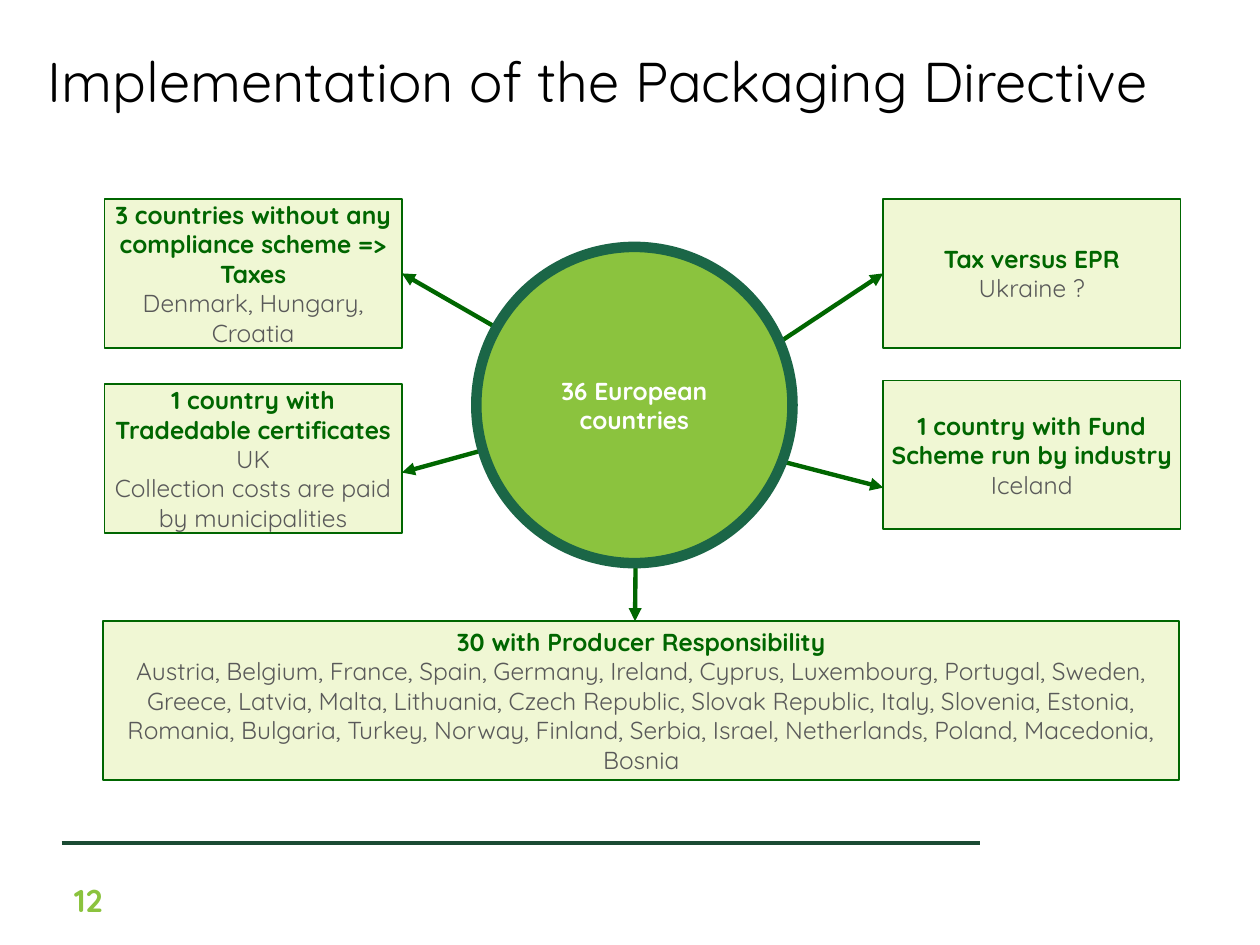
from dataclasses import dataclass

from lxml import etree
from pptx import Presentation
from pptx.dml.color import RGBColor
from pptx.enum.shapes import MSO_CONNECTOR, MSO_SHAPE
from pptx.enum.text import MSO_ANCHOR, PP_ALIGN
from pptx.oxml.ns import qn
from pptx.util import Inches, Pt

STRAIGHT = MSO_CONNECTOR.STRAIGHT
RECTANGLE, OVAL = MSO_SHAPE.RECTANGLE, MSO_SHAPE.OVAL
TOP, MIDDLE = MSO_ANCHOR.TOP, MSO_ANCHOR.MIDDLE
LEFT, CENTER = PP_ALIGN.LEFT, PP_ALIGN.CENTER


@dataclass(frozen=True)
class Theme:
    font: str = "Quicksand"
    title_size: float = 32
    number_size: float = 18
    body_size: float = 14
    black: str = "000000"
    white: str = "FFFFFF"
    grey: str = "595959"
    green: str = "006600"
    pale: str = "F0F7D4"
    lime: str = "8BC33E"
    ring: str = "1B6647"
    rule: str = "1A4B33"


@dataclass(frozen=True)
class Box:
    left: float
    top: float
    width: float
    height: float


@dataclass(frozen=True)
class Card:
    box: Box
    heading: str
    details: tuple[str, ...]


@dataclass(frozen=True)
class Arrow:
    start: tuple[float, float]
    end: tuple[float, float]


THEME = Theme()
CARD_WIDTH, CARD_HEIGHT = 2.36, 1.18
LEFT_COLUMN, RIGHT_COLUMN = 0.83, 7.01
LEFT_EDGE = LEFT_COLUMN + CARD_WIDTH
TOP_ROW = 1.58
WIDE_TOP = 4.93


def small_box(left: float, top: float) -> Box:
    return Box(left, top, CARD_WIDTH, CARD_HEIGHT)


CARDS = [
    Card(small_box(LEFT_COLUMN, TOP_ROW),
         "3 countries without any compliance scheme => Taxes",
         ("Denmark, Hungary, Croatia",)),
    Card(small_box(RIGHT_COLUMN, TOP_ROW), "Tax versus EPR", ("Ukraine ?",)),
    Card(small_box(LEFT_COLUMN, 3.05), "1 country with Tradedable certificates",
         ("UK", "Collection costs are paid by municipalities")),
    Card(Box(0.82, WIDE_TOP, 8.54, 1.26), "30 with Producer Responsibility",
         ("Austria, Belgium, France, Spain, Germany, Ireland, Cyprus, Luxembourg, "
          "Portugal, Sweden, Greece, Latvia, Malta, Lithuania, Czech Republic, "
          "Slovak Republic, Italy, Slovenia, Estonia, Romania, Bulgaria, Turkey, "
          "Norway, Finland, Serbia, Israel, Netherlands, Poland, Macedonia, Bosnia",)),
    Card(small_box(RIGHT_COLUMN, 3.02),
         "1 country with Fund Scheme run by industry", ("Iceland",)),
]

ARROWS = [
    Arrow((3.99, 3.53), (LEFT_EDGE, 3.75)),
    Arrow((6.12, 2.76), (RIGHT_COLUMN, 2.17)),
    Arrow((5.05, 3.91), (5.04, WIDE_TOP)),
    Arrow((6.12, 3.64), (RIGHT_COLUMN, 3.87)),
    Arrow((4.06, 2.67), (LEFT_EDGE, 2.17)),
]


def place(box: Box) -> tuple:
    return tuple(Inches(length) for length in (box.left, box.top, box.width, box.height))


def set_frame(frame, anchor, inset: float | None = None) -> None:
    frame.word_wrap = True
    frame.vertical_anchor = anchor
    if inset is not None:
        frame.margin_left = frame.margin_right = Inches(inset)
        frame.margin_top = frame.margin_bottom = Inches(inset)


def write(paragraph, text: str, size: float, color: str,
          bold: bool = False, align=CENTER) -> None:
    paragraph.text = text
    paragraph.alignment = align
    font = paragraph.font
    font.name, font.size, font.bold = THEME.font, Pt(size), bold
    font.color.rgb = RGBColor.from_string(color)


def add_label(slide, box: Box, text: str, size: float, color: str,
              bold: bool, anchor, inset: float | None = None) -> None:
    frame = slide.shapes.add_textbox(*place(box)).text_frame
    set_frame(frame, anchor, inset)
    write(frame.paragraphs[0], text, size, color, bold, LEFT)


def add_panel(slide, kind, box: Box, fill: str, line: str, weight: float):
    shape = slide.shapes.add_shape(kind, *place(box))
    shape.shadow.inherit = False
    shape.fill.solid()
    shape.fill.fore_color.rgb = RGBColor.from_string(fill)
    shape.line.color.rgb = RGBColor.from_string(line)
    shape.line.width = Pt(weight)
    return shape


def add_card(slide, card: Card) -> None:
    frame = add_panel(slide, RECTANGLE, card.box, THEME.pale, THEME.green, 1).text_frame
    set_frame(frame, MIDDLE, 0.04)
    write(frame.paragraphs[0], card.heading, THEME.body_size, THEME.green, True)
    for detail in card.details:
        write(frame.add_paragraph(), detail, THEME.body_size, THEME.grey)


def add_line(slide, line: Arrow, color: str, weight: float, arrowhead: bool) -> None:
    points = (Inches(value) for value in (*line.start, *line.end))
    connector = slide.shapes.add_connector(STRAIGHT, *points)
    connector.line.color.rgb = RGBColor.from_string(color)
    connector.line.width = Pt(weight)
    properties = connector.element.spPr
    if arrowhead:
        etree.SubElement(properties.find(qn("a:ln")), qn("a:tailEnd"), type="triangle")
    etree.SubElement(properties, qn("a:effectLst"))


def main() -> None:
    presentation = Presentation()
    presentation.slide_width, presentation.slide_height = Inches(10), Inches(7.5)
    slide = presentation.slides.add_slide(presentation.slide_layouts[6])

    # Footer rule, page number and title
    add_line(slide, Arrow((0.49, 6.69), (7.78, 6.69)), THEME.rule, 2, False)
    add_label(slide, Box(0.49, 6.94, 0.61, 0.4), "12",
              THEME.number_size, THEME.lime, True, TOP)
    add_label(slide, Box(0.38, 0.24, 8.99, 0.79),
              "Implementation of the Packaging Directive",
              THEME.title_size, THEME.black, False, MIDDLE, 0)

    # Country groups and the arrows leading to them
    for card in CARDS:
        add_card(slide, card)
    for arrow in ARROWS:
        add_line(slide, arrow, THEME.green, 2.5, True)

    # Central circle covers the arrow starts
    circle = add_panel(slide, OVAL, Box(3.78, 1.96, 2.51, 2.51),
                       THEME.lime, THEME.ring, 6)
    set_frame(circle.text_frame, MIDDLE)
    write(circle.text_frame.paragraphs[0], "36 European countries",
          THEME.body_size, THEME.white, True)

    presentation.save("out.pptx")


if __name__ == "__main__":
    main()
